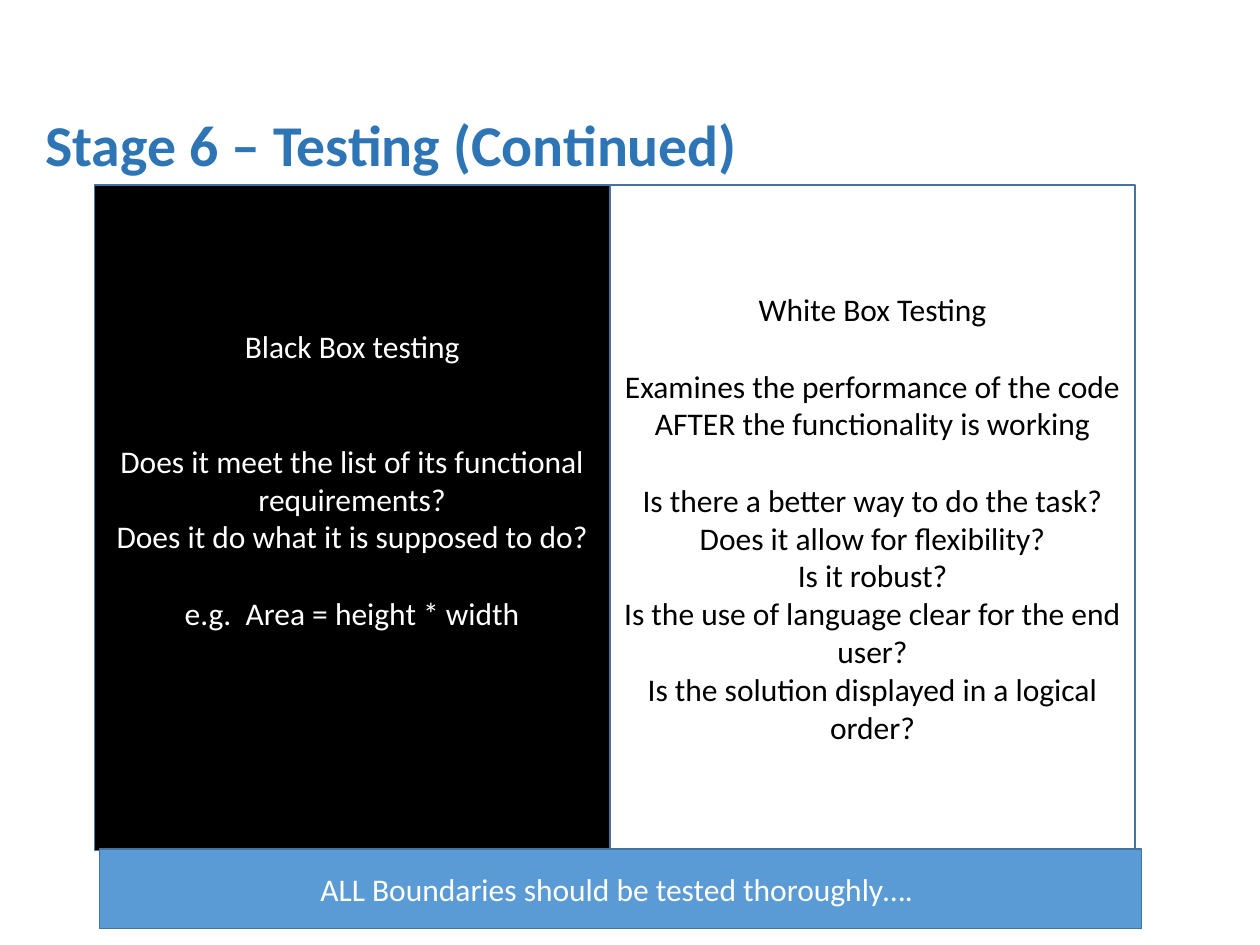
import dataclasses

import pptx
import pptx.dml.color
import pptx.enum.shapes
import pptx.enum.text
import pptx.util


@dataclasses.dataclass(frozen=True)
class Theme:
    font: str = "Calibri"
    title_size: int = 33
    body_size: int = 18
    line_step: int = 22
    heading: str = "2E75B6"
    accent: str = "5B9BD5"
    outline: str = "43739E"
    black: str = "000000"
    white: str = "FFFFFF"


THEME = Theme()
WIDTH, HEIGHT = 10, 7.5
LEFT, MIDDLE, RIGHT = 0.75, 4.84, 9.01
PANEL_TOP, PANEL_HEIGHT = 1.47, 5.28

# Each entry is the text and the number of line steps above it.
BLACK_BOX = [
    ("Black Box testing", 0),
    ("Does it meet the list of its functional requirements?", 2),
    ("Does it do what it is supposed to do?", 0),
    ("e.g.  Area = height * width", 1),
]
WHITE_BOX = [
    ("White Box Testing", 0),
    ("Examines the performance of the code AFTER the functionality is working", 1),
    ("Is there a better way to do the task?", 1),
    ("Does it allow for flexibility?", 0),
    ("Is it robust?", 0),
    ("Is the use of language clear for the end user?", 0),
    ("Is the solution displayed in a logical order?", 0),
]
BOUNDARIES = [("ALL Boundaries should be tested thoroughly…. ", 0)]


def rgb(value):
    return pptx.dml.color.RGBColor.from_string(value)


def inches(*lengths):
    return [pptx.util.Inches(length) for length in lengths]


def write(para, text, *, color, size=THEME.body_size, bold=False, gap=0,
          align=pptx.enum.text.PP_ALIGN.CENTER):
    para.alignment = align
    para.space_before = pptx.util.Pt(gap * THEME.line_step)
    span = para.add_run()
    span.text = text
    span.font.name = THEME.font
    span.font.size = pptx.util.Pt(size)
    span.font.bold = bold
    span.font.color.rgb = rgb(color)


def prepare_frame(box):
    frame = box.text_frame
    frame.word_wrap = True
    frame.vertical_anchor = pptx.enum.text.MSO_ANCHOR.MIDDLE
    return frame


def add_title(page, text):
    box = page.shapes.add_textbox(*inches(0.26, 0.68, 9.51, 0.99))
    para = prepare_frame(box).paragraphs[0]
    para.line_spacing = 0.9
    write(para, text, color=THEME.heading, size=THEME.title_size, bold=True,
          align=pptx.enum.text.PP_ALIGN.LEFT)


def add_panel(page, bounds, lines, *, fill, color, steps_below=0):
    """Add an outlined rectangle; steps_below keeps line steps free under the text."""
    box = page.shapes.add_shape(
        pptx.enum.shapes.MSO_SHAPE.RECTANGLE, *inches(*bounds))
    box.shadow.inherit = False
    box.fill.solid()
    box.fill.fore_color.rgb = rgb(fill)
    box.line.color.rgb = rgb(THEME.outline)
    box.line.width = pptx.util.Pt(1)
    frame = prepare_frame(box)
    frame.margin_bottom += pptx.util.Pt(steps_below * THEME.line_step)
    for index, (text, gap) in enumerate(lines):
        para = frame.add_paragraph() if index else frame.paragraphs[0]
        write(para, text, color=color, gap=gap)


def main():
    deck = pptx.Presentation()
    deck.slide_width, deck.slide_height = inches(WIDTH, HEIGHT)
    page = deck.slides.add_slide(deck.slide_layouts[6])

    add_panel(page, (LEFT, PANEL_TOP, MIDDLE - LEFT, PANEL_HEIGHT), BLACK_BOX,
              fill=THEME.black, color=THEME.white, steps_below=2)
    add_title(page, "Stage 6 – Testing (Continued)")
    add_panel(page, (MIDDLE, PANEL_TOP, RIGHT - MIDDLE, PANEL_HEIGHT), WHITE_BOX,
              fill=THEME.white, color=THEME.black)
    add_panel(page, (0.79, 6.74, 8.27, 0.63), BOUNDARIES,
              fill=THEME.accent, color=THEME.white)

    deck.save("out.pptx")


if __name__ == "__main__":
    main()
